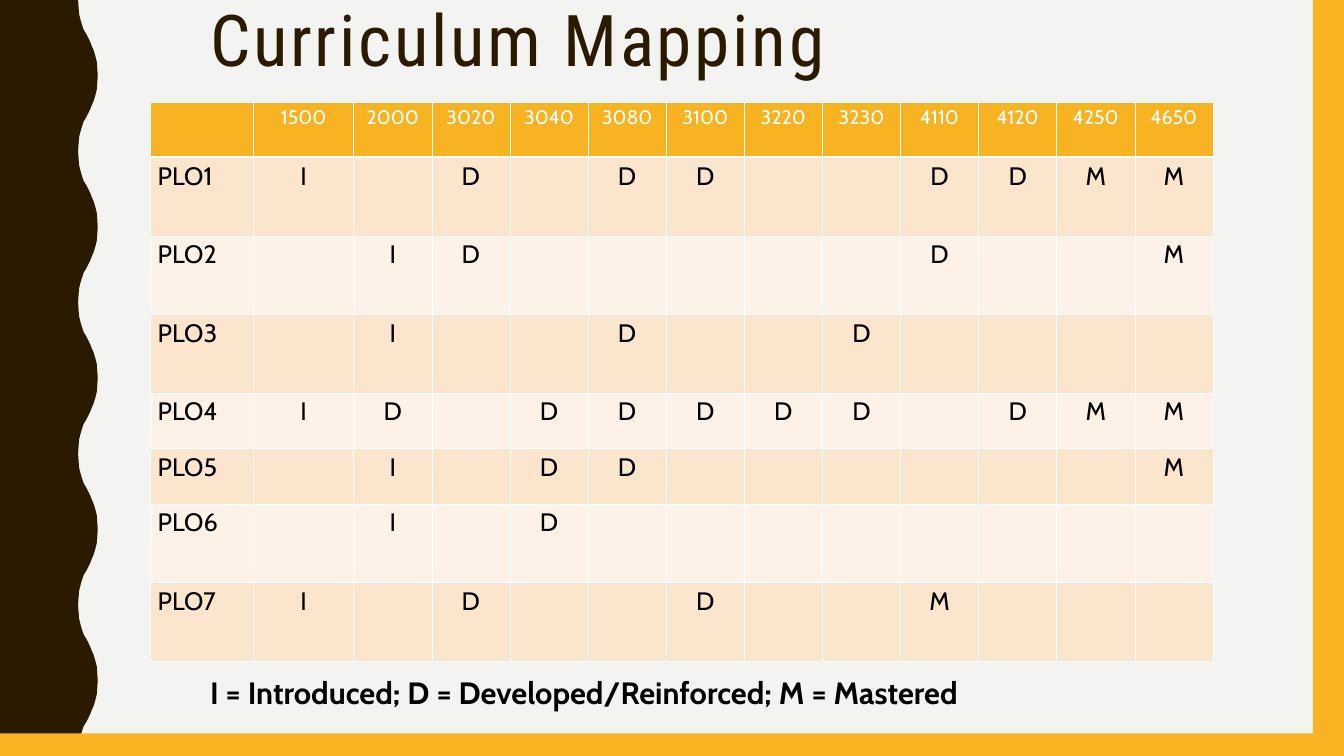
from pptx import Presentation
from pptx import oxml
from pptx.dml.color import RGBColor
from pptx.enum import shapes, text
from pptx.oxml import ns
from pptx.util import Inches, Pt

HUES = {"page": "F3F3F2", "dark": "2A1A00", "gold": "F8B323", "peach": "FCE5CD",
        "cream": "FEF2E8", "white": "FFFFFF", "black": "000000"}
WIDE, HIGH = 26.67, 15
CREST = [(1.55, 0), (1.56, 0.15), (1.57, 0.28), (1.6, 0.4), (1.63, 0.5),
         (1.66, 0.59), (1.71, 0.67), (1.75, 0.75), (1.79, 0.83), (1.82, 0.91),
         (1.86, 1), (1.89, 1.1), (1.92, 1.22), (1.93, 1.35), (1.94, 1.5)]
WAVE = 3
HEADS = "1500 2000 3020 3040 3080 3100 3220 3230 4110 4120 4250 4650".split()
MARKS = ["I-D-DD--DDMM", "-ID-----D--M", "-I--D--D----", "ID-DDDDD-DMM",
         "-I-DD------M", "-I-D--------", "I-D--D--M---"]
COLS = [2.05, 1.99] + [1.55] * 11
ROWS = [1.1, 1.56, 1.56, 1.56, 1.1, 1.1, 1.56, 1.56]


def hue(name):
    return RGBColor.from_string(HUES[name])


def paint(shape, name):
    shape.fill.solid()
    shape.fill.fore_color.rgb = hue(name)
    shape.line.fill.background()
    shape.shadow.inherit = False


def style(para, face, size, name, bold=False):
    for run in para.runs:
        run.font.name = face
        run.font.size = Pt(size)
        run.font.bold = bold
        run.font.color.rgb = hue(name)


def add_bar(slide, box):
    bar = slide.shapes.add_shape(shapes.MSO_SHAPE.RECTANGLE, *map(Inches, box))
    paint(bar, "gold")


def add_wave(slide, box):
    left, top, wide, high = box
    crest = CREST + [(x, WAVE - y) for x, y in CREST[-2:0:-1]]
    edge = [(x, y + WAVE * turn) for turn in range(high // WAVE) for x, y in crest]
    edge += [(CREST[0][0], high), (0, high)]
    spots = [(Inches(left + x), Inches(top + y)) for x, y in edge]
    form = slide.shapes.build_freeform(Inches(left), Inches(top))
    form.add_line_segments(spots, close=True)
    paint(form.convert_to_shape(), "dark")


def add_edges(cell, base):
    props = cell._tc.get_or_add_tcPr()
    for spot, (side, width) in enumerate(zip("LRTB", (1, 1, 1, base))):
        line = oxml.parse_xml(
            f'<a:ln{side} {ns.nsdecls("a")} w="{Pt(width)}"><a:solidFill>'
            f'<a:srgbClr val="{HUES["white"]}"/></a:solidFill></a:ln{side}>')
        props.insert(spot, line)


def add_cell(cell, words, fill, size, ink, mid, base):
    cell.margin_left = cell.margin_right = Inches(0.15)
    cell.margin_top = cell.margin_bottom = Inches(0.07)
    cell.fill.solid()
    cell.fill.fore_color.rgb = hue(fill)
    add_edges(cell, base)
    if words:
        para = cell.text_frame.paragraphs[0]
        para.text = words
        para.alignment = text.PP_ALIGN.CENTER if mid else text.PP_ALIGN.LEFT
        style(para, "Cabin", size, ink)


def add_map(slide, box):
    frame = slide.shapes.add_table(len(ROWS), len(COLS), *map(Inches, box))
    table = frame.table
    for col, wide in zip(table.columns, COLS):
        col.width = Inches(wide)
    for row, high in zip(table.rows, ROWS):
        row.height = Inches(high)
    for num, words in enumerate([""] + HEADS):
        add_cell(table.cell(0, num), words, "gold", 28, "white", True, 3)
    for row, marks in enumerate(MARKS, 1):
        fill = "peach" if row % 2 else "cream"
        cells = [f"PLO{row}"] + [mark.strip("-") for mark in marks]
        for num, words in enumerate(cells):
            add_cell(table.cell(row, num), words, fill, 36, "black", num > 0, 1)


def add_text(slide, box, words, face, size, name, bold=False):
    frame = slide.shapes.add_textbox(*map(Inches, box)).text_frame
    frame.word_wrap = True
    frame.text = words
    para = frame.paragraphs[0]
    style(para, face, size, name, bold)
    return para


def add_title(slide, box):
    para = add_text(slide, box, "Curriculum Mapping", "Roboto Condensed", 102, "dark")
    para.line_spacing = 0.9
    para.runs[0].font._element.set("spc", "400")


def add_key(slide, box):
    add_text(slide, box, "I = Introduced; D = Developed/Reinforced; M = Mastered",
             "Cabin", 44, "black", True)


def main():
    deck = Presentation()
    deck.slide_width, deck.slide_height = Inches(WIDE), Inches(HIGH)
    slide = deck.slides.add_slide(deck.slide_layouts[6])
    slide.background.fill.solid()
    slide.background.fill.fore_color.rgb = hue("page")
    add_wave(slide, (0, 0, 1.94, HIGH))
    add_bar(slide, (WIDE - 0.62, 0, 0.62, HIGH))
    add_bar(slide, (0, HIGH - 0.45, WIDE, 0.45))
    add_map(slide, (2.98, 2.02, sum(COLS), sum(ROWS)))
    add_title(slide, (4.07, 0.04, 18, 2.5))
    add_key(slide, (4.07, 13.31, 16.3, 0.84))
    deck.save("out.pptx")


if __name__ == "__main__":
    main()
